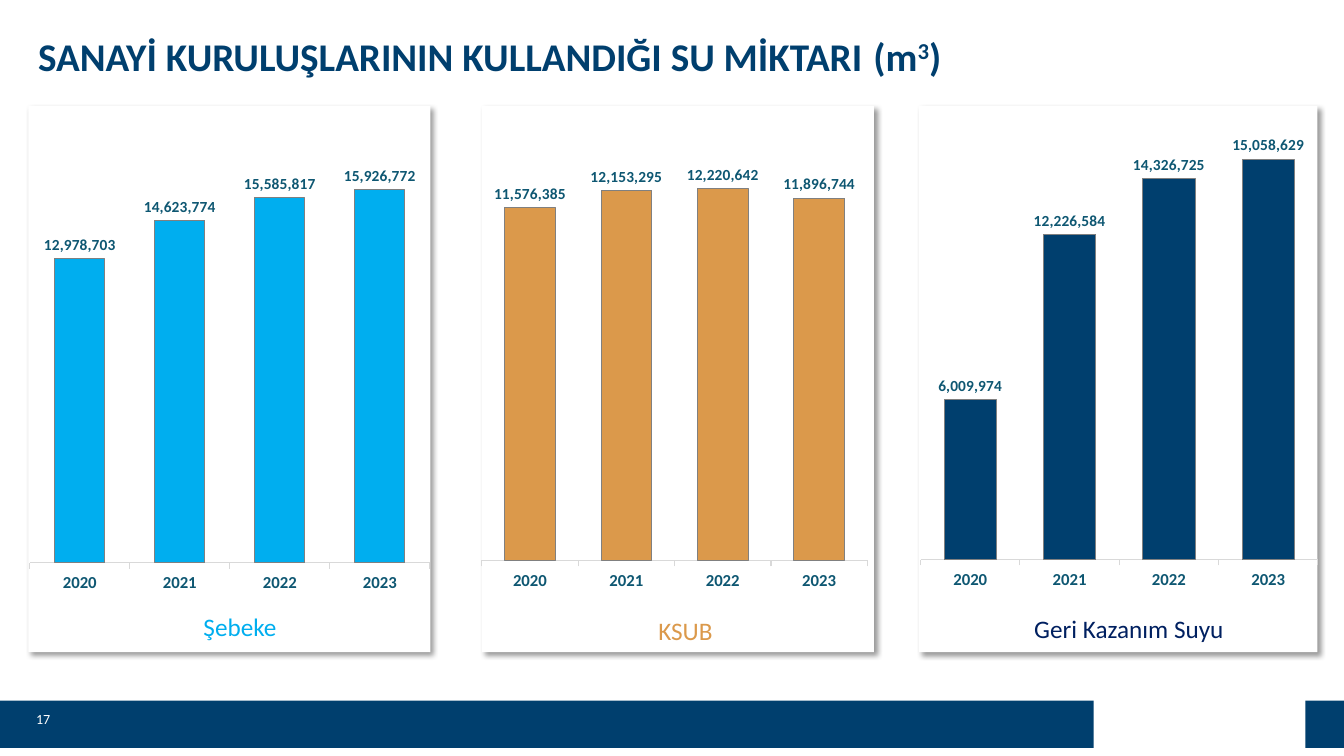
from dataclasses import dataclass

from lxml import etree
from pptx import Presentation
from pptx.chart.data import CategoryChartData
from pptx.dml.color import RGBColor
from pptx.enum.chart import XL_CHART_TYPE, XL_LABEL_POSITION, XL_TICK_LABEL_POSITION, XL_TICK_MARK
from pptx.enum.shapes import MSO_SHAPE
from pptx.enum.text import MSO_ANCHOR, MSO_AUTO_SIZE, PP_ALIGN
from pptx.oxml.ns import qn
from pptx.util import Pt

COLUMNS = XL_CHART_TYPE.COLUMN_CLUSTERED
OUTSIDE_END = XL_LABEL_POSITION.OUTSIDE_END
LABELS_LOW = XL_TICK_LABEL_POSITION.LOW
TICK_OUT, TICK_NONE = XL_TICK_MARK.OUTSIDE, XL_TICK_MARK.NONE
RECTANGLE = MSO_SHAPE.RECTANGLE
TOP = MSO_ANCHOR.TOP
GROW = MSO_AUTO_SIZE.SHAPE_TO_FIT_TEXT
LEFT, CENTER = PP_ALIGN.LEFT, PP_ALIGN.CENTER


@dataclass(frozen=True)
class Theme:
    navy: str = "003F6E"
    white: str = "FFFFFF"
    black: str = "000000"
    sky: str = "00AEEF"
    amber: str = "DB994B"
    ink: str = "002060"
    teal: str = "0E5772"
    axis: str = "D9D9D9"
    outline: str = "808080"
    font: str = "Calibri"
    chart_font: str = "Cabin"
    title_size: int = 28
    gap_size: int = 36
    caption_size: int = 18
    axis_size: int = 12
    value_size: int = 11
    small_size: int = 10


THEME = Theme()
YEARS = ("2020", "2021", "2022", "2023")
NUMBER_FORMAT = "#,##0"
PLOT_LAYOUT = {"layoutTarget": "inner", "xMode": "edge", "yMode": "edge",
               "x": 0.04, "y": 0, "w": 0.96, "h": 0.9}
CARD_TOP, CARD_HEIGHT = 75.6, 390.2

# Chart and caption boxes are offsets from the top left corner of the card.
PANELS = (
    {"caption": "Şebeke", "left": 20.2, "width": 287.3,
     "chart": (-10.8, 25.2, 298, 334.8), "caption_box": (117.4, 357.8, 67.7, 28.8),
     "values": (12978703, 14623774, 15585817, 15926772),
     "color": THEME.sky, "caption_color": THEME.sky, "gap": 99, "maximum": 18_000_000},
    {"caption": "KSUB", "left": 344.2, "width": 280,
     "chart": (-11.5, 20.2, 287.3, 338.4), "caption_box": (118.8, 360.7, 53.3, 28.8),
     "values": (11576385, 12153295, 12220642, 11896744),
     "color": THEME.amber, "caption_color": THEME.amber, "gap": 90, "maximum": 14_000_000},
    {"caption": "Geri Kazanım Suyu", "left": 656.6, "width": 284.4,
     "chart": (-10.8, 20.2, 296, 337.7), "caption_box": (74.2, 359.3, 151.2, 28.8),
     "values": (6009974, 12226584, 14326725, 15058629),
     "color": THEME.navy, "caption_color": THEME.ink, "gap": 90, "maximum": 16_000_000},
)


def apply(target, **values):
    for name, value in values.items():
        setattr(target, name, value)


def style_font(font, size, color, bold=False, name=THEME.font):
    apply(font, name=name, size=Pt(size), bold=bold)
    font.color.rgb = RGBColor.from_string(color)


def points(box):
    return [Pt(length) for length in box]


def add_rectangle(page, box, color):
    shape = page.shapes.add_shape(RECTANGLE, *points(box))
    shape.shadow.inherit = False
    shape.fill.solid()
    shape.fill.fore_color.rgb = RGBColor.from_string(color)
    shape.line.fill.background()
    return shape


def add_card(page, box):
    """Add a white panel with a soft shadow to the lower right."""
    card = add_rectangle(page, box, THEME.white)
    effects = card._element.spPr.find(qn("a:effectLst"))
    shadow = etree.SubElement(effects, qn("a:outerShdw"), blurRad=str(Pt(4)), dist=str(Pt(3)),
                              dir="2700000", algn="tl", rotWithShape="0")
    color = etree.SubElement(shadow, qn("a:srgbClr"), val=THEME.black)
    etree.SubElement(color, qn("a:alpha"), val="40000")


def add_text(page, box, spans, color, align=LEFT, wrap=True, grow=True):
    """Add one line made of (text, size, bold, baseline) spans."""
    text_box = page.shapes.add_textbox(*points(box))
    frame = text_box.text_frame
    apply(frame, word_wrap=wrap, vertical_anchor=TOP)
    if grow:
        frame.auto_size = GROW
    para = frame.paragraphs[0]
    para.alignment = align
    for text, size, bold, baseline in spans:
        span = para.add_run()
        span.text = text
        style_font(span.font, size, color, bold)
        if baseline:
            span.font._element.set("baseline", str(baseline * 1000))


def set_plot_layout(chart):
    plot_area = chart._chartSpace.chart.plotArea
    for layout in plot_area.findall(qn("c:layout")):
        plot_area.remove(layout)
    layout = etree.Element(qn("c:layout"))
    manual = etree.SubElement(layout, qn("c:manualLayout"))
    for name, value in PLOT_LAYOUT.items():
        etree.SubElement(manual, qn(f"c:{name}"), val=str(value))
    plot_area.insert(0, layout)


def add_column_chart(page, box, panel):
    data = CategoryChartData(number_format=NUMBER_FORMAT)
    data.categories = YEARS
    data.add_series("Series 1", panel["values"])
    chart = page.shapes.add_chart(COLUMNS, *points(box), data).chart
    apply(chart, has_title=False, has_legend=False)
    style_font(chart.font, THEME.small_size, THEME.black, name=THEME.chart_font)
    set_plot_layout(chart)

    apply(chart.value_axis, visible=False, has_major_gridlines=False,
          minimum_scale=0, maximum_scale=panel["maximum"])
    years = chart.category_axis
    apply(years, major_tick_mark=TICK_OUT, minor_tick_mark=TICK_NONE,
          tick_label_position=LABELS_LOW, has_major_gridlines=False)
    style_font(years.tick_labels.font, THEME.axis_size, THEME.teal, True)

    plot = chart.plots[0]
    apply(plot, gap_width=panel["gap"], overlap=44, vary_by_categories=False,
          has_data_labels=True)
    labels = plot.data_labels
    apply(labels, show_value=True, position=OUTSIDE_END,
          number_format=NUMBER_FORMAT, number_format_is_linked=False)
    style_font(labels.font, THEME.value_size, THEME.teal, True)

    columns = plot.series[0].format
    columns.fill.solid()
    columns.fill.fore_color.rgb = RGBColor.from_string(panel["color"])
    for line, color in ((columns.line, THEME.outline), (years.format.line, THEME.axis)):
        line.width = Pt(0.75)
        line.color.rgb = RGBColor.from_string(color)


def add_panel(page, box, panel):
    """Add a card with its column chart and caption."""
    left, top = box[:2]

    def within(part):
        return left + part[0], top + part[1], *part[2:]

    add_card(page, box)
    add_column_chart(page, within(panel["chart"]), panel)
    add_text(page, within(panel["caption_box"]),
             [(panel["caption"], THEME.caption_size, False, 0)],
             panel["caption_color"], CENTER, wrap=False)


def add_footer(page, box, number):
    left, top, width, height = box
    add_rectangle(page, (left, top, 781.2, height), THEME.navy)
    add_rectangle(page, (left + 932.4, top, width - 932.4, height), THEME.navy)
    add_text(page, (left + 18.7, top + 3.6, 41.8, 21.6),
             [(number, THEME.small_size, False, 0)], THEME.white, grow=False)


def add_title(page, box):
    size = THEME.title_size
    add_text(page, box, [
        ("SANAYİ KURULUŞLARININ KULLANDIĞI SU MİKTARI", size, True, 0),
        (" ", THEME.gap_size, True, 0),
        ("(m", size, True, 0),
        ("3", size, True, 30),
        (")", size, True, 0),
    ], THEME.navy)


def main():
    deck = Presentation()
    apply(deck, slide_width=Pt(960), slide_height=Pt(540))
    page = deck.slides.add_slide(deck.slide_layouts[6])
    add_footer(page, (0, 500.4, 960, 33.8), "17")
    add_title(page, (20.2, 11.5, 800, 51.1))
    for panel in PANELS:
        add_panel(page, (panel["left"], CARD_TOP, panel["width"], CARD_HEIGHT), panel)
    deck.save("out.pptx")


if __name__ == "__main__":
    main()
